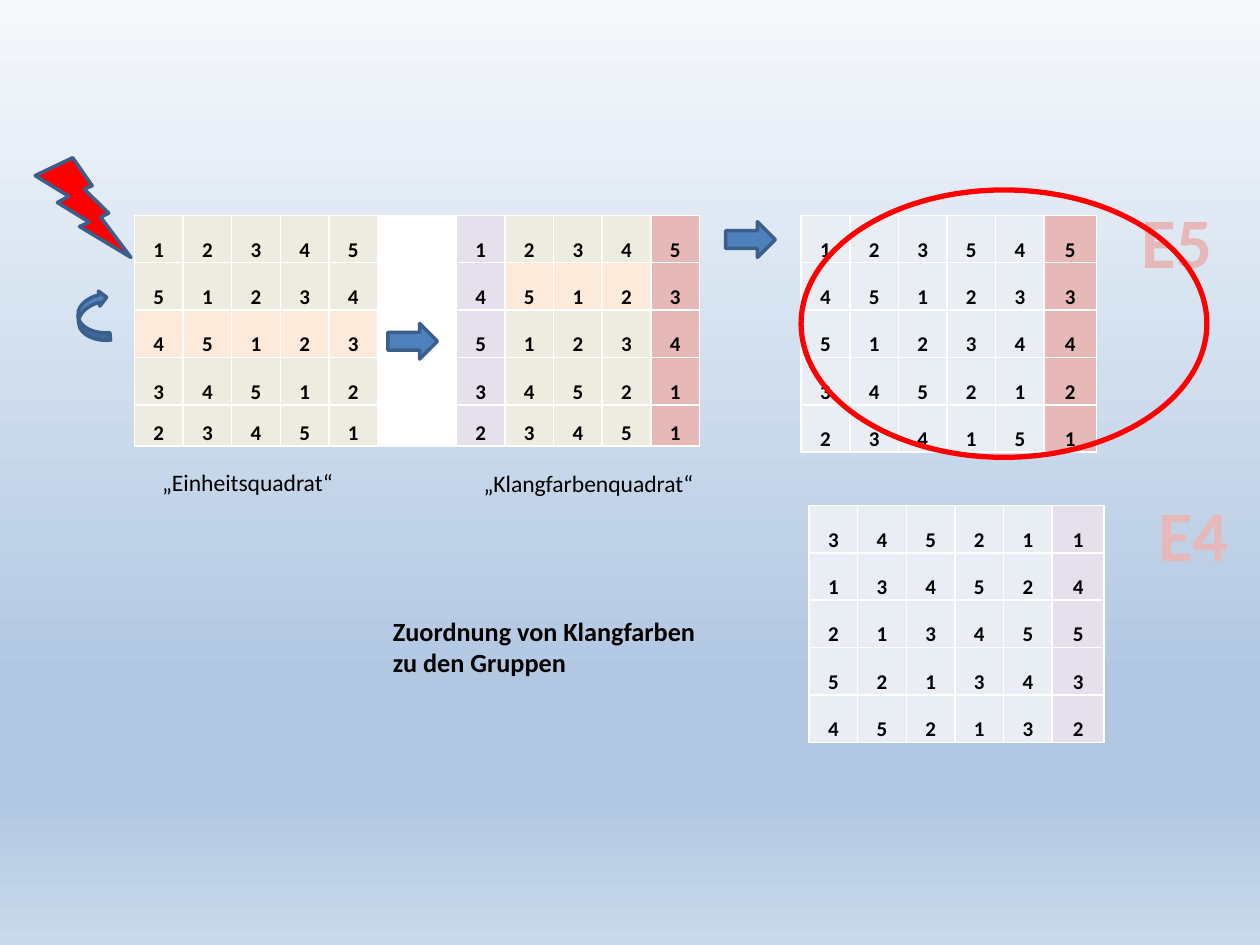
from dataclasses import dataclass
from typing import Optional

from lxml.etree import SubElement
from pptx import Presentation
from pptx.dml.color import RGBColor as RGB
from pptx.enum.shapes import MSO_SHAPE as SHAPE
from pptx.enum.text import MSO_ANCHOR as ANCHOR, PP_ALIGN as ALIGN
from pptx.oxml.ns import qn
from pptx.util import Cm, Pt

COLORS = {
    "beige": "EEECE1", "white": "FFFFFF", "violet": "E6E0EC", "rose": "E6B9B8",
    "peach": "FDEADA", "pale": "E9EDF4", "blue": "4F81BD", "navy": "3A5F8C",
    "red": "FF0000", "black": "000000",
    "sky_top": "F6F9FC", "sky": "B0C6E1", "sky_bottom": "CAD9EB",
}
FILLS = {"b": "beige", "w": "white", "v": "violet", "r": "rose", "p": "peach", "e": "pale"}
BACKGROUND = [(0, "sky_top"), (74, "sky"), (83, "sky"), (100, "sky_bottom")]
COL, ROW = 0.98, 0.955


@dataclass
class Square:
    left: float
    top: float
    cols: list[float]
    rows: list[float]
    digits: list[str]
    fills: list[str]


@dataclass
class Figure:
    kind: SHAPE
    left: float
    top: float
    width: float
    height: float
    fill: Optional[str] = "blue"
    line: str = "navy"
    weight: float = 2
    rotation: float = 0


@dataclass
class Label:
    text: str
    left: float
    top: float
    width: float
    height: float
    size: float = 13.5
    bold: bool = False
    color: str = "black"
    align: ALIGN = ALIGN.LEFT
    wrap: bool = True


DOUBLE_SQUARE = Square(
    2.71, 4.34, [COL] * 5 + [1.59] + [COL] * 5, [ROW] * 4 + [0.83],
    ["12345 12345", "51234 45123", "45123 51234", "34512 34521", "23451 23451"],
    ["bbbbbwvbbbr", "bbbbbwvpppr", "pppppwvbbbr", "bbbbbwvbbbr", "bbbbbwvbbbr"],
)
GROUP_COLS = [COL] * 5 + [1.05]
E5_SQUARE = Square(
    16.15, 4.34, GROUP_COLS, [ROW] * 5,
    ["123545", "451233", "512344", "345212", "234151"], ["eeeeer"] * 5,
)
E4_SQUARE = Square(
    16.31, 10.19, GROUP_COLS, [ROW] * 5,
    ["345211", "134524", "213455", "521343", "452132"], ["eeeeev"] * 5,
)
GROUP_STYLE = {"size": 40.5, "bold": True, "color": "rose", "align": ALIGN.CENTER, "wrap": False}
ITEMS = [
    DOUBLE_SQUARE,
    Figure(SHAPE.CURVED_DOWN_ARROW, 1.37, 6.07, 1.02, 0.61, rotation=264.8),
    Figure(SHAPE.RIGHT_ARROW, 7.82, 6.52, 1, 0.72),
    Label("„Einheitsquadrat“", 3.02, 9.3, 4.55, 0.84),
    Figure(SHAPE.RIGHT_ARROW, 14.63, 4.47, 1, 0.72),
    Label("Zuordnung von Klangfarben zu den Gruppen", 7.67, 12.27, 6.71, 1.55, 15, True),
    Label("E5", 22.81, 3.89, 1.83, 1.93, **GROUP_STYLE),
    Label("E4", 23.15, 9.8, 1.83, 1.93, **GROUP_STYLE),
    E5_SQUARE,
    E4_SQUARE,
    Label("„Klangfarbenquadrat“", 9.5, 9.32, 4.88, 0.84),
    Figure(SHAPE.OVAL, 16.15, 3.83, 8.18, 5.39, None, "red", 3),
    Figure(SHAPE.LIGHTNING_BOLT, 0.71, 3.18, 1.93, 2.01, "red"),
]


def rgb(name: str) -> RGB:
    return RGB.from_string(COLORS[name])


def write(tf, text: str, *, size: float = 12, bold: bool = False,
          color: str = "black", align: ALIGN = ALIGN.LEFT) -> None:
    p = tf.paragraphs[0]
    p.alignment = align
    r = p.add_run()
    r.text = text
    r.font.name = "Calibri"
    r.font.size = Pt(size)
    r.font.bold = bold
    r.font.color.rgb = rgb(color)


def add_solid(parent, name: str) -> None:
    fill = SubElement(parent, qn("a:solidFill"))
    SubElement(fill, qn("a:srgbClr"), val=COLORS[name])


def paint_background(s) -> None:
    fill = s.background.fill
    fill.gradient()
    fill.gradient_angle = 270
    stops = s._element.find(".//" + qn("a:gsLst"))
    for stop in list(stops):
        stops.remove(stop)
    for percent, name in BACKGROUND:
        stop = SubElement(stops, qn("a:gs"), pos=str(percent * 1000))
        SubElement(stop, qn("a:srgbClr"), val=COLORS[name])


def format_cell(cell, digit: str, fill: str) -> None:
    cell.margin_left = cell.margin_right = cell.margin_top = cell.margin_bottom = 0
    cell.vertical_anchor = ANCHOR.BOTTOM
    if digit.strip():
        write(cell.text_frame, digit, bold=True, align=ALIGN.CENTER)
    props = cell._tc.get_or_add_tcPr()
    for side in ("lnL", "lnR", "lnT", "lnB"):
        add_solid(SubElement(props, qn(f"a:{side}"), w=str(Pt(1))), "white")
    cell.fill.solid()
    cell.fill.fore_color.rgb = rgb(fill)


def draw_square(s, q: Square) -> None:
    frame = s.shapes.add_table(len(q.rows), len(q.cols), Cm(q.left), Cm(q.top),
                               Cm(sum(q.cols)), Cm(sum(q.rows)))
    table = frame.table
    table.first_row = table.horz_banding = False
    for col, width in zip(table.columns, q.cols):
        col.width = Cm(width)
    for row, height, digits, fills in zip(table.rows, q.rows, q.digits, q.fills):
        row.height = Cm(height)
        for cell, digit, fill in zip(row.cells, digits, fills):
            format_cell(cell, digit, FILLS[fill])


def draw_figure(s, f: Figure) -> None:
    sp = s.shapes.add_shape(f.kind, Cm(f.left), Cm(f.top), Cm(f.width), Cm(f.height))
    sp.shadow.inherit = False
    sp.rotation = f.rotation
    if f.fill:
        sp.fill.solid()
        sp.fill.fore_color.rgb = rgb(f.fill)
    else:
        sp.fill.background()
    sp.line.color.rgb = rgb(f.line)
    sp.line.width = Pt(f.weight)


def draw_label(s, b: Label) -> None:
    sp = s.shapes.add_textbox(Cm(b.left), Cm(b.top), Cm(b.width), Cm(b.height))
    tf = sp.text_frame
    tf.word_wrap = b.wrap
    if not b.wrap:
        tf.margin_left = tf.margin_right = Cm(0.18)
        tf.margin_top = tf.margin_bottom = Cm(0.1)
    write(tf, b.text, size=b.size, bold=b.bold, color=b.color, align=b.align)


def main() -> None:
    prs = Presentation()
    prs.slide_width, prs.slide_height = Cm(25.4), Cm(19.05)
    s = prs.slides.add_slide(prs.slide_layouts[6])
    paint_background(s)
    draw = {Square: draw_square, Figure: draw_figure, Label: draw_label}
    for item in ITEMS:
        draw[type(item)](s, item)
    prs.save("out.pptx")


if __name__ == "__main__":
    main()
